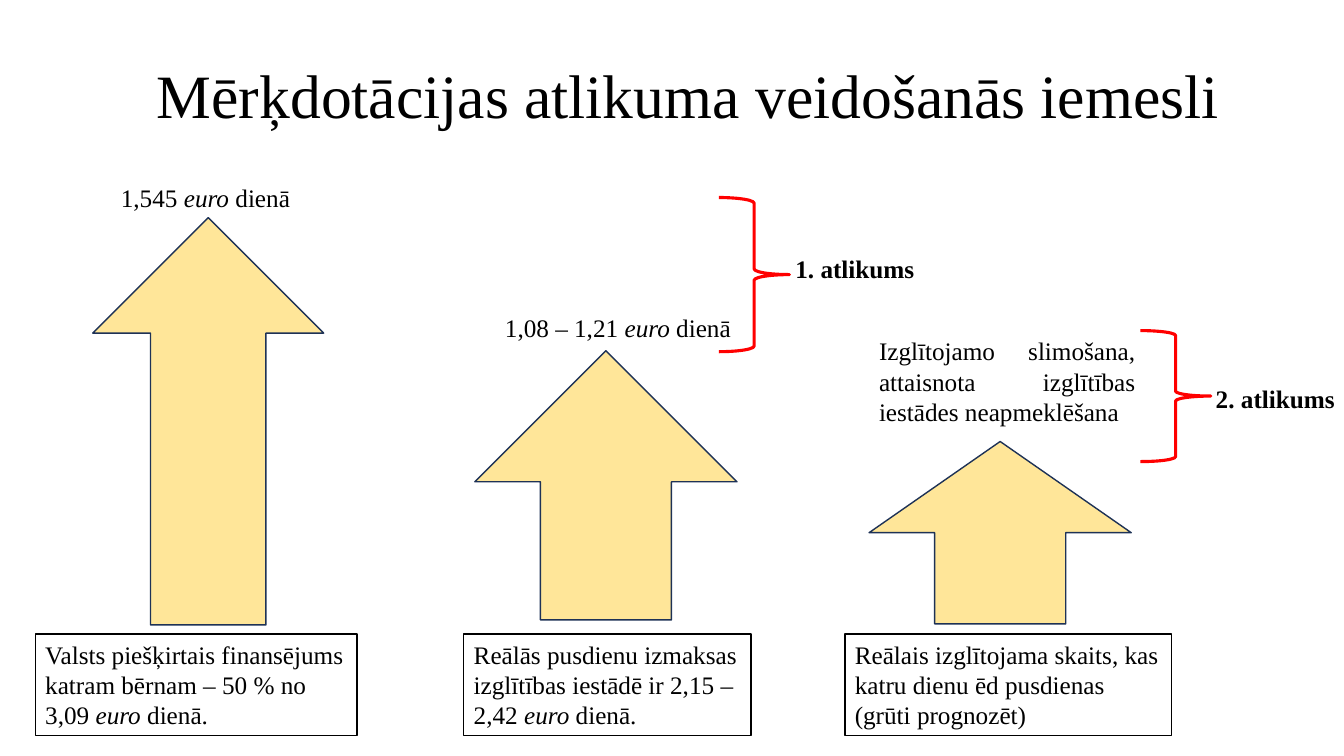
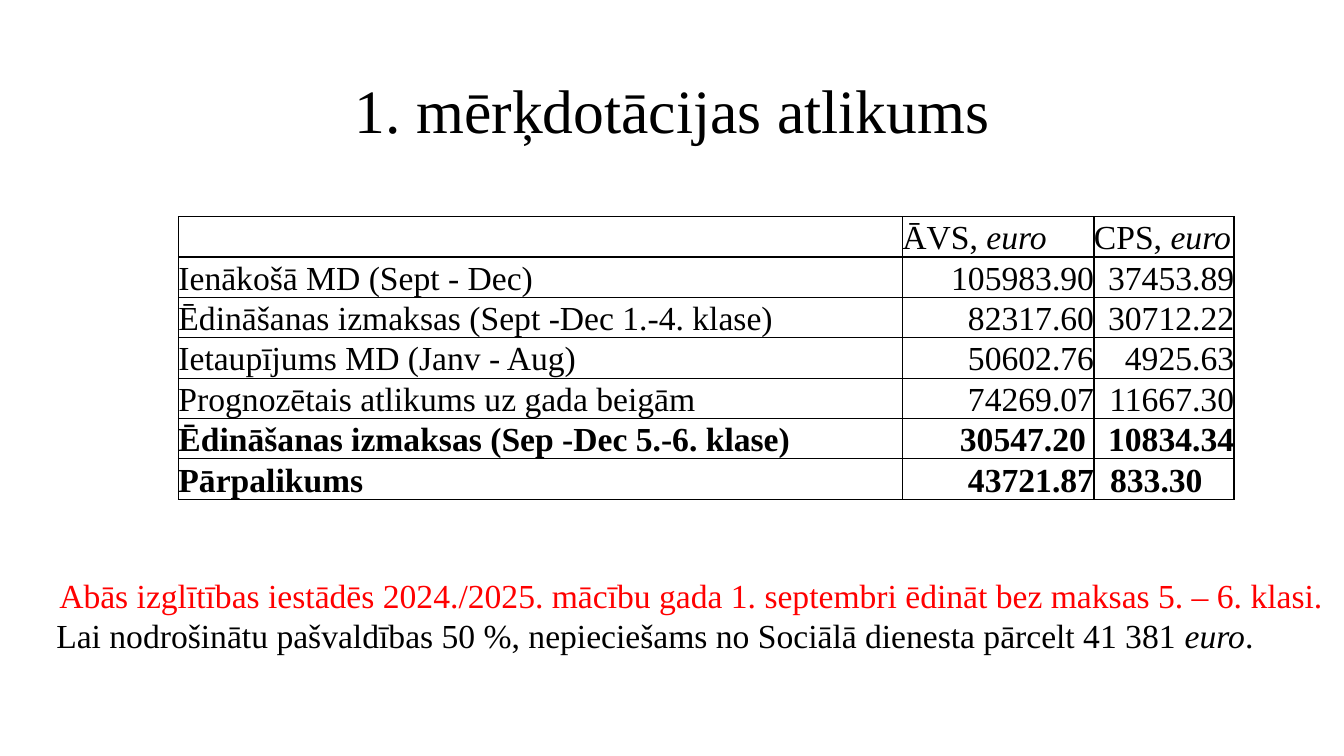
from lxml import etree
from pptx import Presentation
from pptx import util as u
from pptx.dml.color import RGBColor
from pptx.enum import shapes, text
from pptx.oxml import ns

PX = 9144
FONT = "Times New Roman"
BLACK = RGBColor(0, 0, 0)
WHITE = RGBColor(255, 255, 255)
RED = RGBColor(255, 0, 0)
SAND = RGBColor(0xFF, 0xE6, 0x99)
NAVY = RGBColor(0x1E, 0x32, 0x56)
LEFT, CENTER, RIGHT, JUSTIFY = (text.PP_ALIGN.LEFT, text.PP_ALIGN.CENTER,
                                text.PP_ALIGN.RIGHT, text.PP_ALIGN.JUSTIFY)
MIDDLE, TOP, BOTTOM = text.MSO_ANCHOR.MIDDLE, text.MSO_ANCHOR.TOP, text.MSO_ANCHOR.BOTTOM


def emu(box):
    return [u.Emu(v * PX) for v in box]


def write(p, content, size=18, color=BLACK, bold=False, align=LEFT, spacing=None):
    p.alignment = align
    p.font.size = u.Pt(size)
    if spacing:
        p.line_spacing = spacing
    for i, part in enumerate(content.split("*")):
        if part:
            r = p.add_run()
            r.text = part
            f = r.font
            f.name, f.size, f.bold, f.italic = FONT, u.Pt(size), bold, i % 2 == 1
            f.color.rgb = color


def add_text(s, box, content, border=None, anchor=TOP, **fmt):
    sp = s.shapes.add_textbox(*emu(box))
    if border is not None:
        sp.fill.solid()
        sp.fill.fore_color.rgb = WHITE
        sp.line.color.rgb = border
        sp.line.width = u.Pt(1)
    tf = sp.text_frame
    tf.word_wrap = True
    tf.vertical_anchor = anchor
    write(tf.paragraphs[0], content, **fmt)
    return tf


def add_title(s, left, top, content):
    add_text(s, (left, top, 1150, 145), content, anchor=MIDDLE,
             size=44, align=CENTER, spacing=0.9)


def add_shape(s, kind, box, line, width, fill=None):
    sp = s.shapes.add_shape(kind, *emu(box))
    sp.shadow.inherit = False
    if fill is None:
        sp.fill.background()
    else:
        sp.fill.solid()
        sp.fill.fore_color.rgb = fill
    sp.line.color.rgb = line
    sp.line.width = u.Pt(width)
    return sp


def add_arrow(s, box):
    add_shape(s, shapes.MSO_SHAPE.UP_ARROW, box, NAVY, 1, SAND)


def add_brace(s, box, curl):
    sp = add_shape(s, shapes.MSO_SHAPE.RIGHT_BRACE, box, RED, 2.25)
    sp.adjustments[0] = curl


def set_borders(cell):
    tc_pr = cell._tc.get_or_add_tcPr()
    for side in ("a:lnL", "a:lnR", "a:lnT", "a:lnB"):
        ln = etree.SubElement(tc_pr, ns.qn(side), w=str(u.Pt(1)))
        fill = etree.SubElement(ln, ns.qn("a:solidFill"))
        etree.SubElement(fill, ns.qn("a:srgbClr"), val=str(BLACK))


def fill_cell(cell, content, bold, align, left=0, right=0):
    set_borders(cell)
    cell.fill.solid()
    cell.fill.fore_color.rgb = WHITE
    cell.margin_left, cell.margin_top, cell.margin_right, cell.margin_bottom = emu(
        (left, 0, right, 0))
    cell.vertical_anchor = BOTTOM
    write(cell.text_frame.paragraphs[0], content, size=24, bold=bold, align=align)


def add_table(s, left, top, widths, row_height, rows, bold_from, special):
    box = (left, top, sum(widths), row_height * len(rows))
    table = s.shapes.add_table(len(rows), len(widths), *emu(box)).table
    for col, width in zip(table.columns, widths):
        col.width = u.Emu(width * PX)
    for i, row in enumerate(rows):
        table.rows[i].height = u.Emu(row_height * PX)
        for j, content in enumerate(row):
            fmt = {"align": RIGHT if i and j else LEFT}
            fmt.update(special.get((i, j), {}))
            fill_cell(table.cell(i, j), content, i >= bold_from, **fmt)


def build_reasons(prs):
    s = prs.slides.add_slide(prs.slide_layouts[6])
    add_title(s, 108, 25, "Mērķdotācijas atlikuma veidošanās iemesli")
    for box in ((92, 216, 229, 404), (471, 348, 260, 267), (862, 438, 260, 181)):
        add_arrow(s, box)
    notes = (
        (35, 319, "Valsts piešķirtais finansējums katram bērnam – 50 % no 3,09 *euro* dienā."),
        (460, 285, "Reālās pusdienu izmaksas izglītības iestādē ir 2,15 – 2,42 *euro* dienā."),
        (838, 324, "Reālais izglītojama skaits, kas katru dienu ēd pusdienas (grūti prognozēt)"),
    )
    for left, width, content in notes:
        add_text(s, (left, 629, width, 101), content, border=BLACK)
    add_text(s, (110, 176, 192, 40), "1,545 *euro* dienā")
    add_text(s, (491, 305, 254, 40), "1,08 – 1,21 *euro* dienā")
    add_text(s, (862, 328, 274, 101),
             "Izglītojamo slimošana, attaisnota izglītības iestādes neapmeklēšana",
             align=JUSTIFY)
    add_brace(s, (713, 196, 70, 153), 0.08)
    add_brace(s, (1131, 328, 70, 130), 0.07)
    add_text(s, (779, 246, 167, 40), "1. atlikums", bold=True)
    add_text(s, (1196, 375, 160, 40), "2. atlikums", bold=True)


def build_balance(prs):
    s = prs.slides.add_slide(prs.slide_layouts[6])
    add_title(s, 92, 40, "1. mērķdotācijas atlikums")
    rows = (
        ("", "ĀVS, *euro*", "CPS, *euro*"),
        ("Ienākošā MD (Sept - Dec)", "105983.90", "37453.89"),
        ("Ēdināšanas izmaksas (Sept -Dec 1.-4. klase)", "82317.60", "30712.22"),
        ("Ietaupījums MD (Janv - Aug)", "50602.76", "4925.63"),
        ("Prognozētais atlikums uz gada beigām", "74269.07", "11667.30"),
        ("Ēdināšanas izmaksas (Sep -Dec 5.-6. klase)", "30547.20", "10834.34"),
        ("Pārpalikums", "43721.87", "833.30"),
    )
    special = {(5, 1): {"right": 8}, (6, 2): {"align": LEFT, "left": 16}}
    add_table(s, 177, 215, (718, 190, 139), 37, rows, 5, special)
    tf = add_text(s, (46, 565, 1279, 91),
                  "Abās izglītības iestādēs 2024./2025. mācību gada 1. septembri "
                  "ēdināt bez maksas 5. – 6. klasi.",
                  size=24, color=RED, align=CENTER)
    write(tf.add_paragraph(),
          "Lai nodrošinātu pašvaldības 50 %, nepieciešams no Sociālā dienesta "
          "pārcelt 41 381 *euro*.", size=24)


def main():
    prs = Presentation()
    prs.slide_width, prs.slide_height = emu((1333, 750))
    build_reasons(prs)
    build_balance(prs)
    prs.save("out.pptx")


if __name__ == "__main__":
    main()
